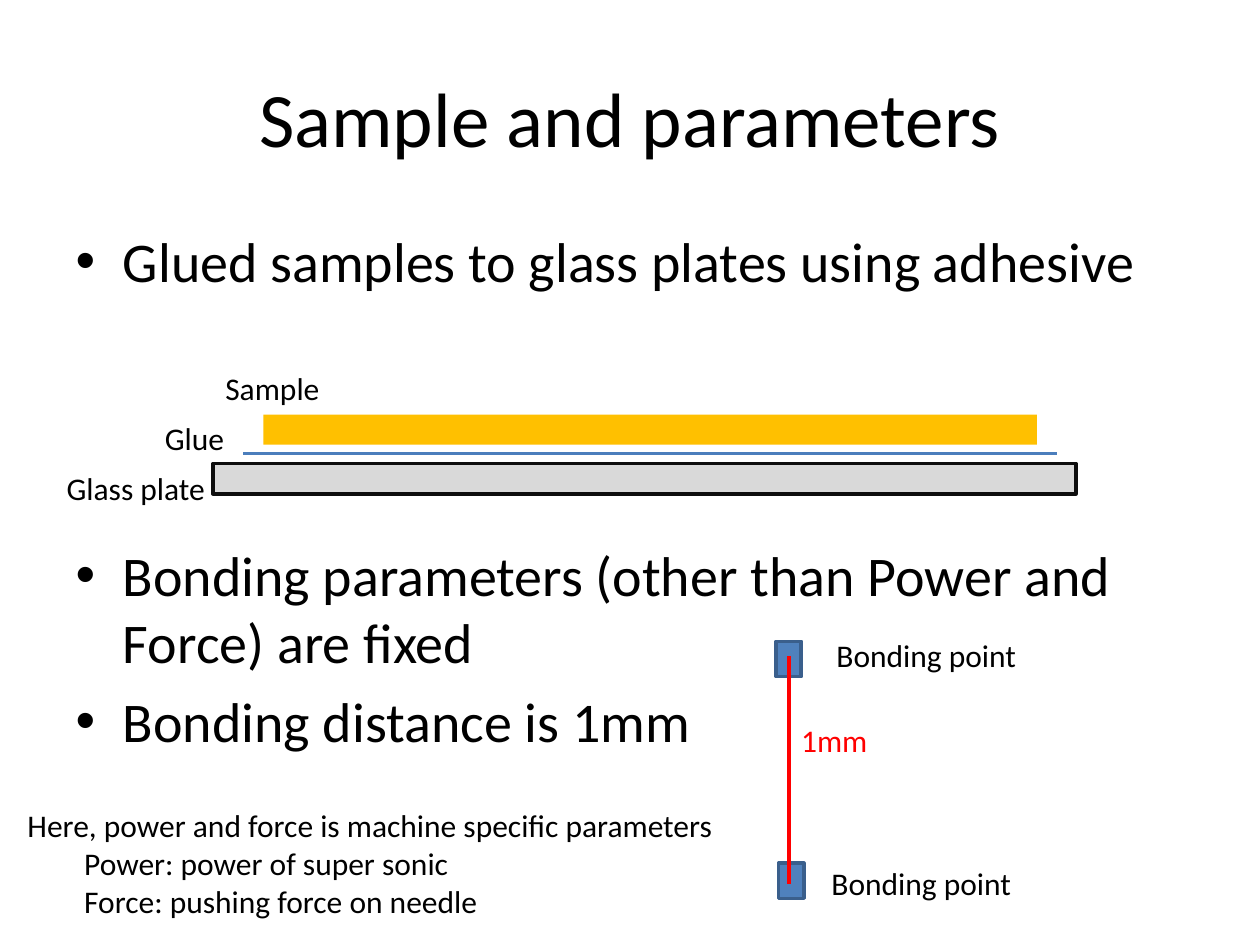
"""Build the slide on sample mounting and bonding parameters."""
from dataclasses import dataclass

from lxml.etree import SubElement
from pptx import Presentation
from pptx.dml.color import RGBColor
from pptx.enum.shapes import MSO_CONNECTOR, MSO_SHAPE
from pptx.enum.text import PP_ALIGN
from pptx.oxml.ns import qn
from pptx.util import Inches, Pt


@dataclass
class Theme:
    font: str = "Calibri"
    black: str = "000000"
    red: str = "FF0000"
    gold: str = "FFC000"
    gray: str = "D9D9D9"
    edge: str = "0D0D0D"
    glue: str = "4B7EBC"
    blue: str = "4F81BD"
    navy: str = "3A5F8C"
    title: int = 44
    body: int = 32
    label: int = 18
    stroke: int = 2


theme = Theme()


def write(frame, text, size=theme.label, color=theme.black, first=True, gap=None, indent=None, align=None):
    para = frame.paragraphs[0] if first else frame.add_paragraph()
    if indent is not None:
        para._p.get_or_add_pPr().set("marL", str(Inches(indent)))
    run = para.add_run()
    run.text = text
    run.font.name = theme.font
    run.font.size = Pt(size)
    run.font.color.rgb = RGBColor.from_string(color)
    if align is not None:
        para.alignment = align
    if gap is not None:
        para.space_before = Pt(gap)


deck = Presentation()
deck.slide_width, deck.slide_height = Inches(10), Inches(7.5)
slide = deck.slides.add_slide(deck.slide_layouts[1])
shapes = slide.shapes

title, body = slide.placeholders
for holder, box in ((title, (0.5, 0.3, 9, 1.25)), (body, (0.5, 1.75, 9, 4.95))):
    holder.left, holder.top, holder.width, holder.height = map(Inches, box)

write(title.text_frame, "Sample and parameters", size=theme.title, align=PP_ALIGN.CENTER)
points = [
    ("Glued samples to glass plates using adhesive", 0),
    ("Bonding parameters (other than Power and Force) are fixed", 141),
    ("Bonding distance is 1mm", 6.4),
]
for n, (text, gap) in enumerate(points):
    write(body.text_frame, text, size=theme.body, first=n == 0, gap=gap)

blocks = [
    ((1.69, 3.68, 6.85, 0.24), theme.gray, theme.edge),
    ((2.09, 3.29, 6.14, 0.24), theme.gold, None),
    ((6.16, 5.09, 0.2, 0.28), theme.blue, theme.navy),
    ((6.18, 6.85, 0.2, 0.28), theme.blue, theme.navy),
]
for box, fill, edge in blocks:
    block = shapes.add_shape(MSO_SHAPE.RECTANGLE, *map(Inches, box))
    block.shadow.inherit = False
    block.fill.solid()
    block.fill.fore_color.rgb = RGBColor.from_string(fill)
    if edge:
        block.line.color.rgb = RGBColor.from_string(edge)
        block.line.width = Pt(theme.stroke)
    else:
        block.line.fill.background()

lines = [
    ((1.93, 3.6, 8.39, 3.6), theme.glue),
    ((6.26, 5.21, 6.26, 7.02), theme.red),
]
for ends, color in lines:
    line = shapes.add_connector(MSO_CONNECTOR.STRAIGHT, *map(Inches, ends))
    line.line.color.rgb = RGBColor.from_string(color)
    line.line.width = Pt(theme.stroke)
    SubElement(line._element.spPr, qn("a:effectLst"))

labels = [
    ((0.43, 3.67, 1.48, 0.4), ["Glass plate"], theme.black),
    ((1.21, 3.28, 0.76, 0.4), ["Glue"], theme.black),
    ((1.69, 2.88, 1.2, 0.4), ["Sample"], theme.black),
    ((6.26, 5.67, 1.42, 0.4), ["1mm"], theme.red),
    ((6.54, 5, 1.69, 0.4), ["Bonding point"], theme.black),
    ((6.5, 6.81, 1.69, 0.4), ["Bonding point"], theme.black),
    ((0.12, 6.35, 5.94, 1.01), [
        "Here, power and force is machine specific parameters",
        "Power: power of super sonic",
        "Force: pushing force on needle",
    ], theme.black),
]
for box, texts, color in labels:
    frame = shapes.add_textbox(*map(Inches, box)).text_frame
    frame.word_wrap = True
    for n, text in enumerate(texts):
        write(frame, text, color=color, first=n == 0, indent=0.45 if n else None)

deck.save("out.pptx")
